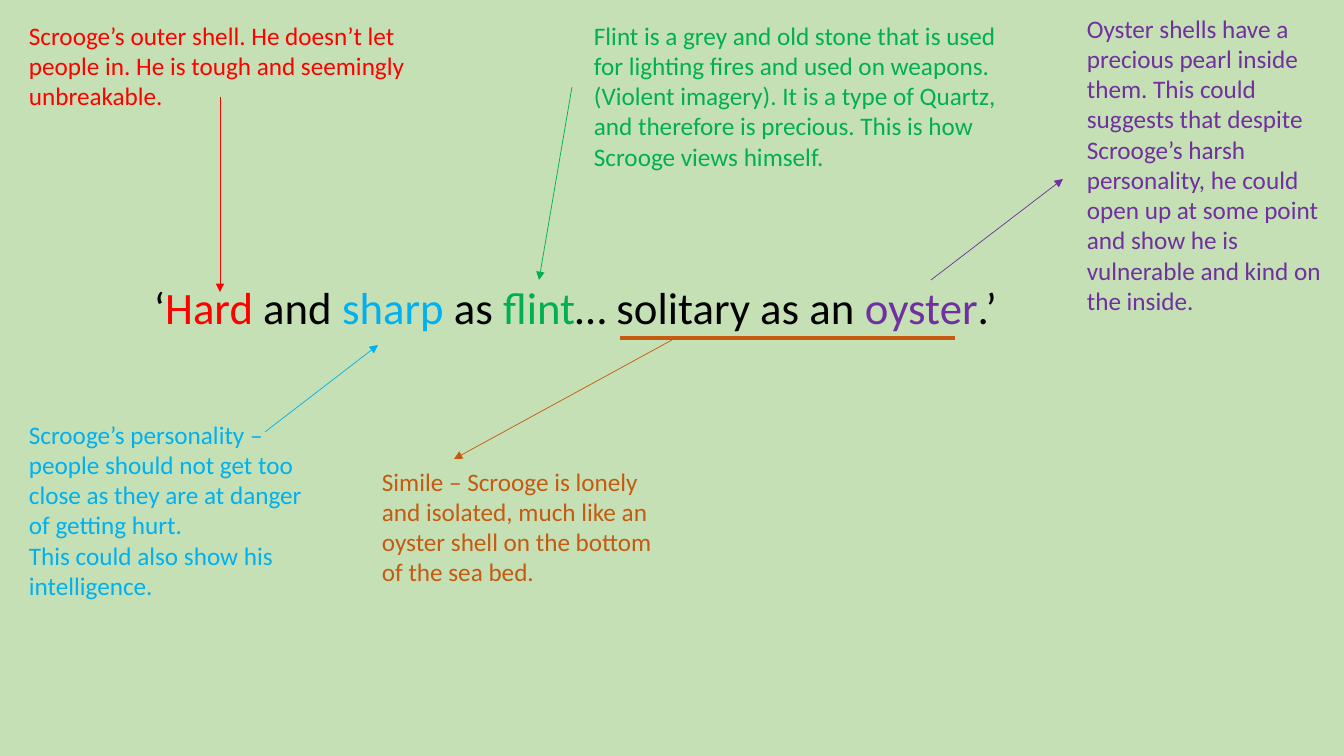
"""Build a slide of colour-coded notes around a quotation about Scrooge."""
from typing import NamedTuple

import lxml.etree
import pptx
import pptx.dml.color
import pptx.enum.shapes
import pptx.enum.text
import pptx.oxml.ns
import pptx.util

EMU_PER_PX = 914400 / 100.8
FONT = "Calibri"
BLACK, RED, BLUE = "000000", "FF0000", "00B0F0"
GREEN, PURPLE, ORANGE = "00B050", "7030A0", "C55A11"
BACKGROUND = "C5E0B4"


class Box(NamedTuple):
    left: int
    top: int
    width: int
    height: int


class Note(NamedTuple):
    box: Box
    color: str
    paragraphs: tuple[str, ...]


class Line(NamedTuple):
    start: tuple[int, int]
    end: tuple[int, int]
    color: str
    width: float = 0.5
    arrow: bool = True


QUOTE_BOX = Box(144, 275, 1025, 65)
QUOTE = (
    ("‘", BLACK),
    ("Hard", RED),
    (" and ", BLACK),
    ("sharp", BLUE),
    (" as ", BLACK),
    ("flint", GREEN),
    ("… solitary as an ", BLACK),
    ("oyster", PURPLE),
    (".’", BLACK),
)
NOTES = (
    Note(Box(19, 15, 453, 102), RED, (
        "Scrooge’s outer shell. He doesn’t let people in. He is tough and seemingly unbreakable.",
    )),
    Note(Box(19, 414, 299, 194), BLUE, (
        "Scrooge’s personality – people should not get too close as they are at danger of getting hurt.",
        "This could also show his intelligence.",
    )),
    Note(Box(584, 15, 453, 163), GREEN, (
        "Flint is a grey and old stone that is used for lighting fires and used on weapons.\n"
        "(Violent imagery). It is a type of Quartz, and therefore is precious. "
        "This is how Scrooge views himself.",
    )),
    Note(Box(372, 461, 299, 132), ORANGE, (
        "Simile – Scrooge is lonely and isolated, much like an oyster shell on the bottom of the sea bed.",
    )),
    Note(Box(1077, 8, 259, 316), PURPLE, (
        "Oyster shells have a precious pearl inside them. This could suggests that despite",
        "Scrooge’s harsh personality, he could open up at some point and show he is "
        "vulnerable and kind on the inside.",
    )),
)
LINES = (
    Line((220, 97), (220, 292), RED),
    Line((265, 432), (378, 345), BLUE),
    Line((572, 87), (539, 280), GREEN),
    Line((620, 338), (955, 338), ORANGE, width=3, arrow=False),
    Line((672, 340), (454, 459), ORANGE),
    Line((931, 280), (1063, 179), PURPLE),
)


def px(value: int) -> pptx.util.Emu:
    return pptx.util.Emu(round(value * EMU_PER_PX))


def rgb(color: str) -> pptx.dml.color.RGBColor:
    return pptx.dml.color.RGBColor.from_string(color)


def add_text_box(s, box: Box):
    tf = s.shapes.add_textbox(*map(px, box)).text_frame
    tf.word_wrap = True
    tf.auto_size = pptx.enum.text.MSO_AUTO_SIZE.SHAPE_TO_FIT_TEXT
    return tf


def add_quote(s) -> None:
    p = add_text_box(s, QUOTE_BOX).paragraphs[0]
    p.font.name = FONT
    p.font.size = pptx.util.Pt(32)
    for text, color in QUOTE:
        r = p.add_run()
        r.text = text
        r.font.color.rgb = rgb(color)


def add_note(s, note: Note) -> None:
    tf = add_text_box(s, note.box)
    for i, text in enumerate(note.paragraphs):
        p = tf.add_paragraph() if i else tf.paragraphs[0]
        p.text = text
        p.font.name = FONT
        p.font.size = pptx.util.Pt(18)
        p.font.color.rgb = rgb(note.color)


def add_line(s, line: Line) -> None:
    sp = s.shapes.add_connector(
        pptx.enum.shapes.MSO_CONNECTOR.STRAIGHT, *map(px, line.start + line.end)
    )
    sp.line.color.rgb = rgb(line.color)
    sp.line.width = pptx.util.Pt(line.width)
    qn = pptx.oxml.ns.qn
    properties = sp.element.spPr
    if line.arrow:
        outline = properties.find(qn("a:ln"))
        lxml.etree.SubElement(outline, qn("a:tailEnd"), type="triangle")
    lxml.etree.SubElement(properties, qn("a:effectLst"))


def main() -> None:
    prs = pptx.Presentation()
    prs.slide_width, prs.slide_height = px(1344), px(756)
    s = prs.slides.add_slide(prs.slide_layouts.get_by_name("Blank"))
    s.background.fill.solid()
    s.background.fill.fore_color.rgb = rgb(BACKGROUND)
    add_quote(s)
    for note in NOTES:
        add_note(s, note)
    for line in LINES:
        add_line(s, line)
    prs.save("out.pptx")


if __name__ == "__main__":
    main()
